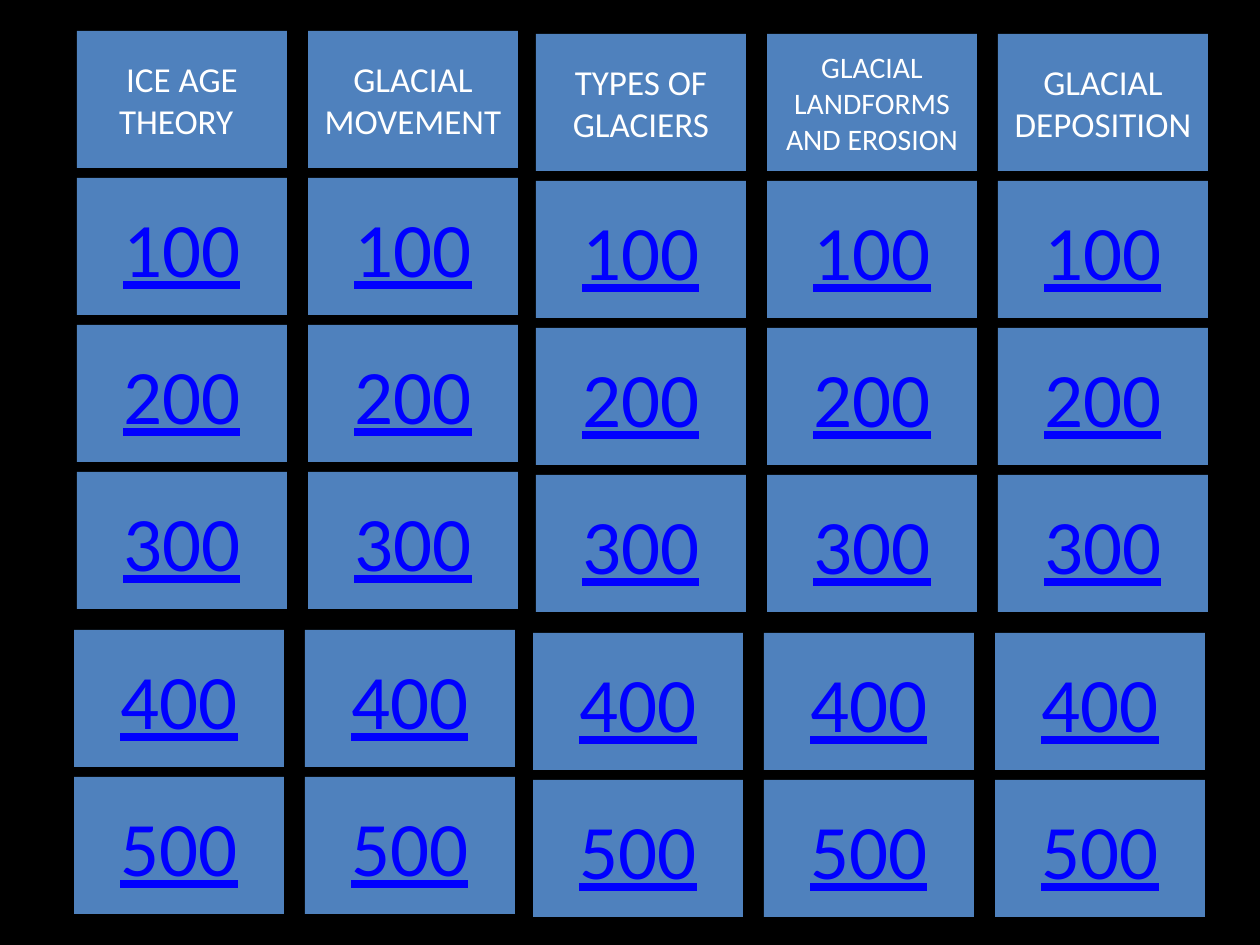
import pptx
import pptx.dml.color
import pptx.enum.shapes
import pptx.enum.text
import pptx.util
from dataclasses import dataclass

RGB = pptx.dml.color.RGBColor.from_string


@dataclass(frozen=True)
class Theme:
    back: str = "000000"
    tile: str = "4F81BD"
    head: str = "FFFFFF"
    link: str = "0000FF"
    font: str = "Calibri"
    big: int = 44
    mid: int = 20
    small: int = 17


THEME = Theme()
WIDE, TALL = 210, 137
STEP = 147          # from one row to the next
DROP = 11           # extra gap above the lower rows
SHIFT = 3           # lower rows sit this far left
SPLIT = 4           # first of the lower rows
POINTS = [100, 200, 300, 400, 500]
# topic, type size, left, top
TOPICS = [
    ("ICE AGE THEORY\t", THEME.mid, 77, 31),
    ("GLACIAL MOVEMENT", THEME.mid, 308, 31),
    ("TYPES OF GLACIERS", THEME.mid, 536, 34),
    ("GLACIAL LANDFORMS AND EROSION", THEME.small, 767, 34),
    ("GLACIAL DEPOSITION", THEME.mid, 998, 34),
]


def px(n):
    return pptx.util.Emu(round(n * 914400 / 126))


def style(item, look):
    for name, value in look.items():
        setattr(item, name, value)


def tile(slide, box, text, size, color, line=False):
    shape = slide.shapes.add_shape(
        pptx.enum.shapes.MSO_SHAPE.RECTANGLE, *map(px, box))
    shape.shadow.inherit = False
    shape.fill.solid()
    shape.fill.fore_color.rgb = RGB(THEME.tile)
    shape.line.fill.background()
    frame = shape.text_frame
    style(frame, {"word_wrap": True,
                  "vertical_anchor": pptx.enum.text.MSO_ANCHOR.MIDDLE})
    para = frame.paragraphs[0]
    para.alignment = pptx.enum.text.PP_ALIGN.CENTER
    run = para.add_run()
    run.text = text
    style(run.font, {"name": THEME.font, "size": pptx.util.Pt(size),
                     "underline": line})
    run.font.color.rgb = RGB(color)


def column(slide, left, top, topic, size):
    """Place a topic tile with its point tiles below."""
    tile(slide, (left, top, WIDE, TALL), topic, size, THEME.head)
    for row, score in enumerate(POINTS, 1):
        low = row >= SPLIT
        box = (left - SHIFT * low, top + row * STEP + DROP * low, WIDE, TALL)
        tile(slide, box, str(score), THEME.big, THEME.link, True)


def board(deck):
    slide = deck.slides.add_slide(deck.slide_layouts[6])
    fill = slide.background.fill
    fill.solid()
    fill.fore_color.rgb = RGB(THEME.back)
    for topic, size, left, top in TOPICS:
        column(slide, left, top, topic, size)


def main():
    deck = pptx.Presentation()
    style(deck, {"slide_width": px(1260), "slide_height": px(945)})
    board(deck)
    deck.save("out.pptx")


if __name__ == "__main__":
    main()
